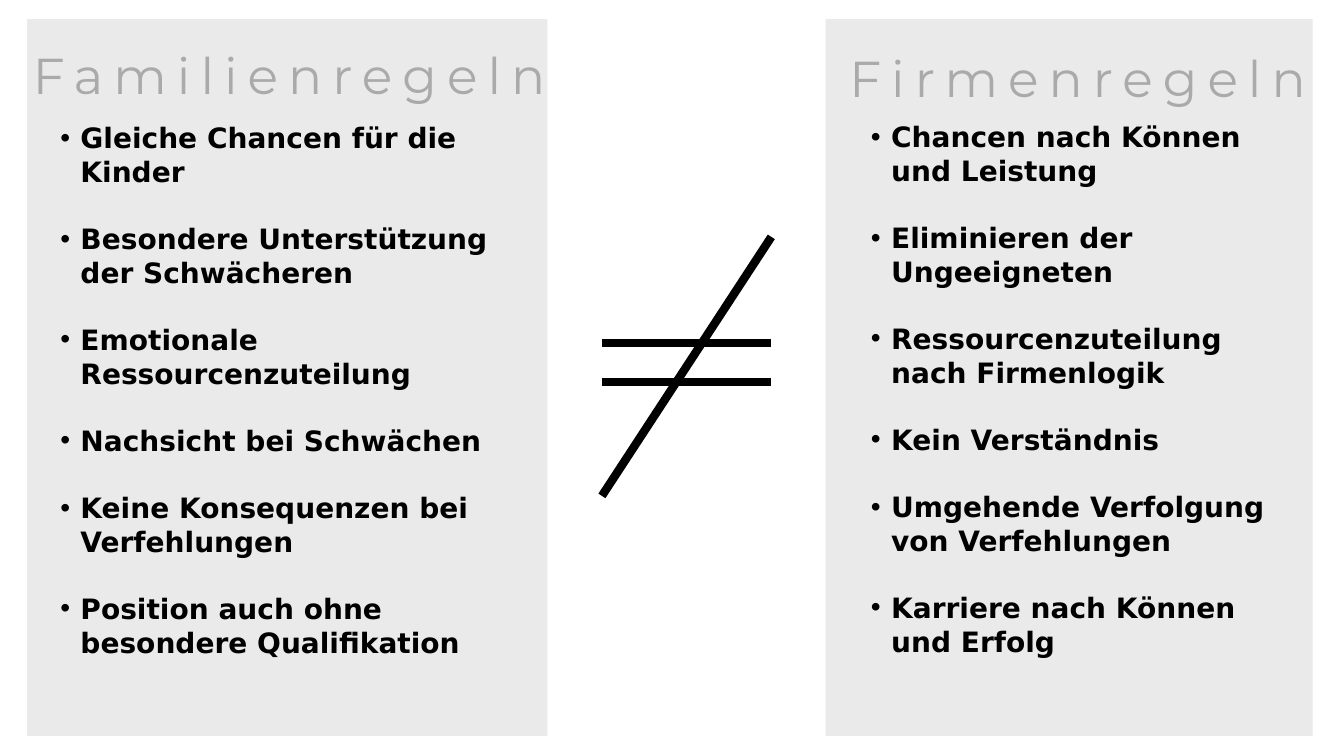
from lxml import etree
from pptx import Presentation
from pptx import util as u
from pptx.dml.color import RGBColor
from pptx.enum import shapes, text
from pptx.oxml.ns import qn

PX = 9144
BLACK = RGBColor(0, 0, 0)
GRAY = RGBColor(0xAA, 0xAA, 0xAA)
PALE = RGBColor(0xEA, 0xEA, 0xEA)

FAMILY = [
    "Gleiche Chancen für die Kinder",
    "Besondere Unterstützung der Schwächeren",
    "Emotionale Ressourcenzuteilung",
    "Nachsicht bei Schwächen",
    "Keine Konsequenzen bei Verfehlungen",
    "Position auch ohne besondere Qualifikation",
]
FIRM = [
    "Chancen nach Können und Leistung",
    "Eliminieren der Ungeeigneten",
    "Ressourcenzuteilung nach Firmenlogik",
    "Kein Verständnis",
    "Umgehende Verfolgung von Verfehlungen",
    "Karriere nach Können und Erfolg",
]


def px(*sizes):
    return [u.Emu(size * PX) for size in sizes]


def style(run, font, size, color, bold=False):
    run.font.name = font
    run.font.size = u.Pt(size)
    run.font.color.rgb = color
    run.font.bold = bold


def add_head(slide, label, box):
    frame = slide.shapes.add_textbox(*px(*box)).text_frame
    frame.word_wrap = False
    frame.margin_left = frame.margin_right = 0
    frame.text = label
    para = frame.paragraphs[0]
    para.alignment = text.PP_ALIGN.CENTER
    run = para.runs[0]
    style(run, "Montserrat", 36, GRAY)
    run.font._element.set("spc", "720")


def add_rules(slide, rules, box):
    frame = slide.shapes.add_textbox(*px(*box)).text_frame
    frame.word_wrap = True
    frame.text = "\n".join(rules)
    for para in frame.paragraphs:
        para.space_after = u.Pt(24)
        props = para._p.get_or_add_pPr()
        props.set("marL", str(20 * PX))
        props.set("indent", str(-20 * PX))
        etree.SubElement(props, qn("a:buFont")).set("typeface", "Arial")
        etree.SubElement(props, qn("a:buChar")).set("char", "•")
        style(para.runs[0], "DejaVu Sans", 20, BLACK, True)


def add_panel(slide, box, label, rules, head, body):
    left, top, width, height = box
    panel = slide.shapes.add_shape(shapes.MSO_SHAPE.RECTANGLE, *px(*box))
    panel.shadow.inherit = False
    panel.fill.solid()
    panel.fill.fore_color.rgb = PALE
    panel.line.fill.background()
    add_head(slide, label, (left + head[0], top + head[1], 520, 60))
    add_rules(slide, rules, (left + body[0], top + body[1], body[2], 549))


def add_unequal(slide, box):
    left, top, width, height = box
    right = left + width
    strokes = [
        (left, top + 105, right, top + 105),
        (left, top + 144, right, top + 144),
        (right, top, left, top + height),
    ]
    for ends in strokes:
        line = slide.shapes.add_connector(
            shapes.MSO_CONNECTOR.STRAIGHT, *px(*ends))
        line.line.color.rgb = BLACK
        line.line.width = u.Pt(6)
        etree.SubElement(line._element.spPr, qn("a:effectLst"))


def main():
    deck = Presentation()
    deck.slide_width, deck.slide_height = px(1333, 750)
    slide = deck.slides.add_slide(deck.slide_layouts[6])
    add_panel(slide, (27, 19, 516, 711), "Familienregeln", FAMILY,
              (0, 20), (23, 96, 454))
    add_panel(slide, (819, 19, 483, 711), "Firmenregeln", FIRM,
              (-10, 23), (35, 95, 429))
    add_unequal(slide, (597, 235, 168, 257))
    deck.save("out.pptx")


if __name__ == "__main__":
    main()
